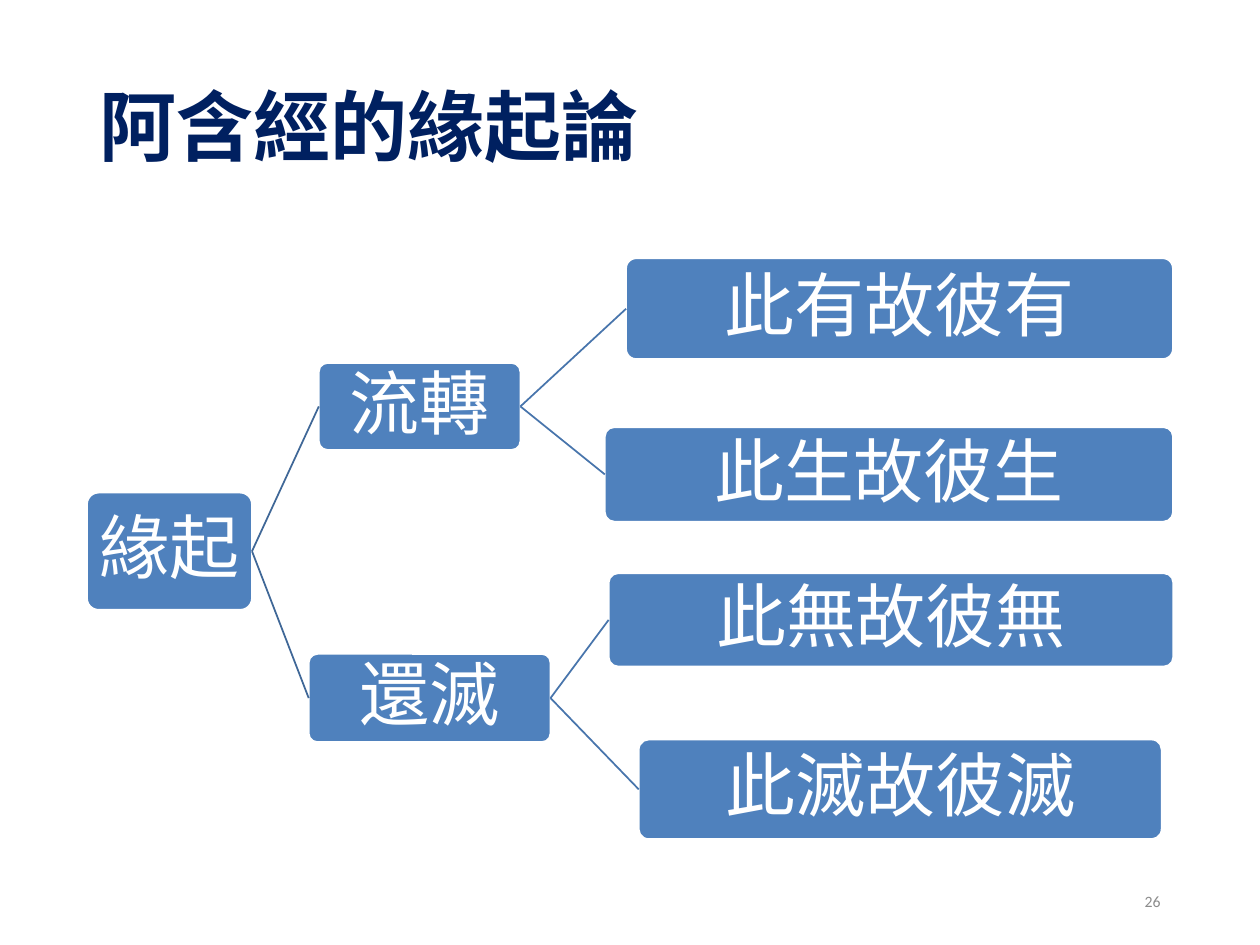
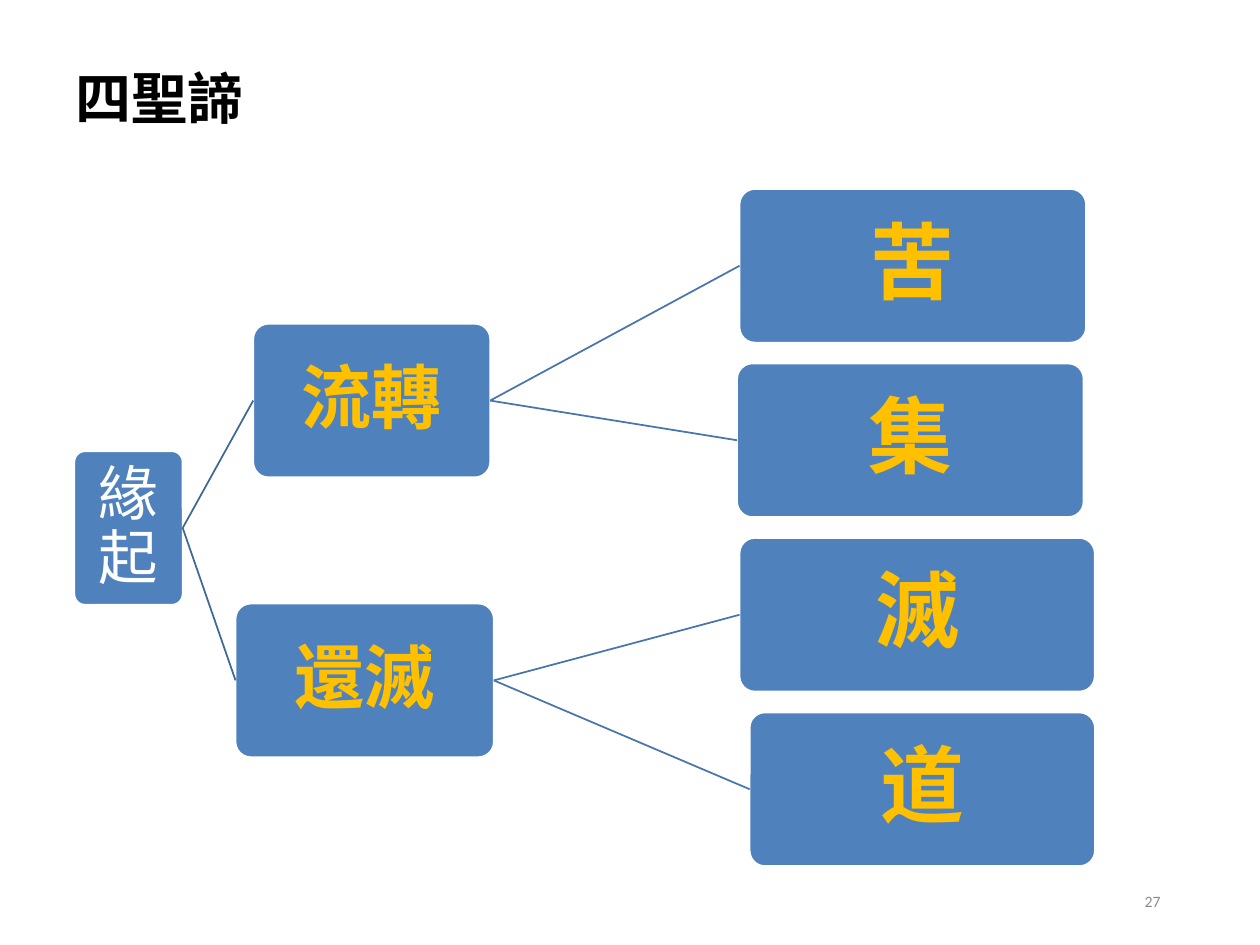
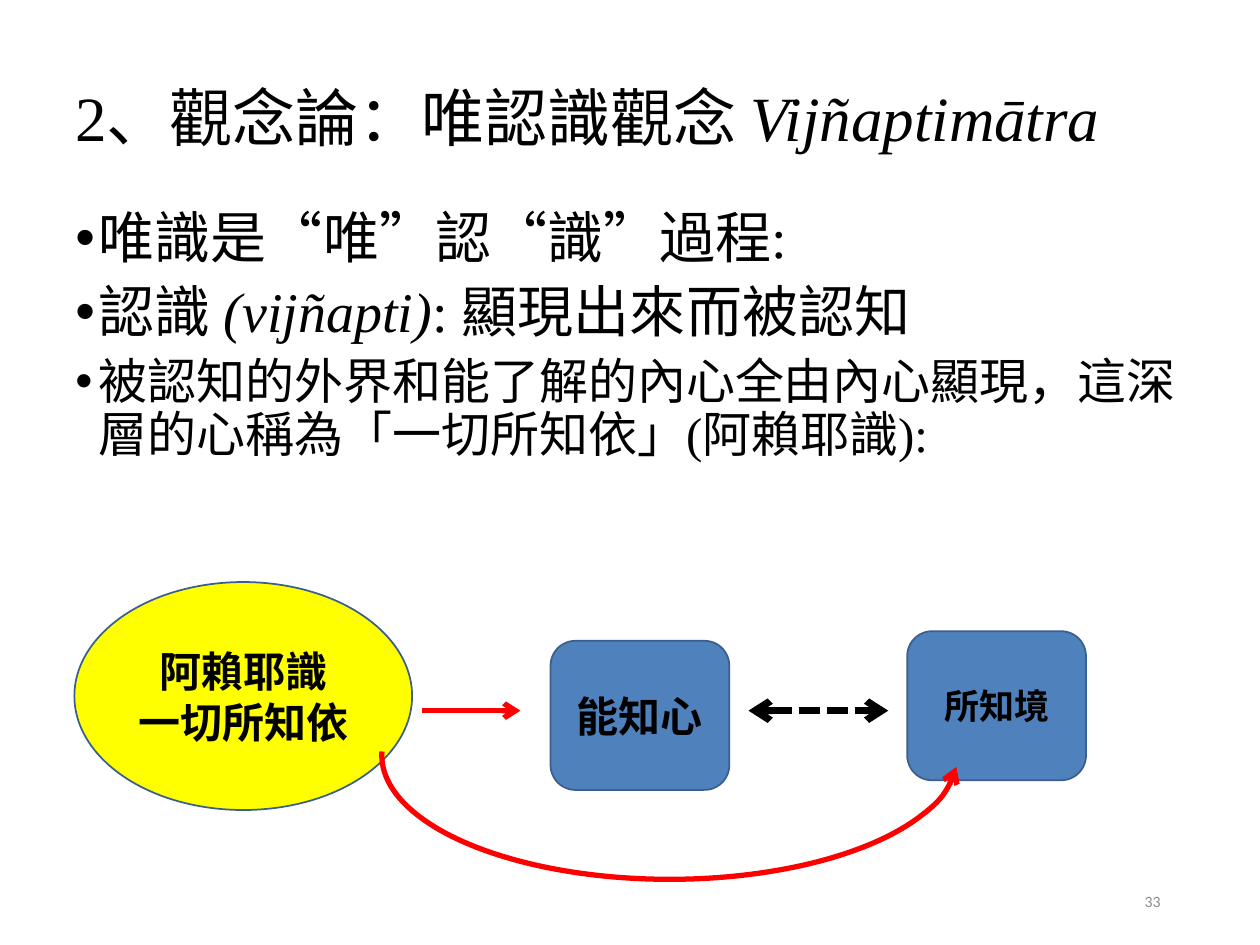
from lxml import etree
from pptx import Presentation
from pptx.dml.color import RGBColor
from pptx.enum import dml, shapes, text
from pptx.oxml import ns
from pptx.util import Pt

BLUE = RGBColor(0x4F, 0x81, 0xBD)
BLUE_EDGE = RGBColor(0x3A, 0x5F, 0x8C)
ROOT_LINK = RGBColor(0x3F, 0x67, 0x97)
BRANCH_LINK = RGBColor(0x48, 0x75, 0xAC)
NAVY = RGBColor(0x00, 0x20, 0x60)
GOLD = RGBColor(0xFF, 0xC0, 0x00)
YELLOW = RGBColor(0xFF, 0xFF, 0x00)
RED = RGBColor(0xFF, 0x00, 0x00)
GREY = RGBColor(0x8C, 0x8C, 0x8C)
BLACK = RGBColor(0, 0, 0)
WHITE = RGBColor(0xFF, 0xFF, 0xFF)
SANS, SERIF = "Calibri", "Times New Roman"
MIDDLE = text.MSO_ANCHOR.MIDDLE
LEFT, CENTER, RIGHT = text.PP_ALIGN.LEFT, text.PP_ALIGN.CENTER, text.PP_ALIGN.RIGHT
ROUNDED = shapes.MSO_SHAPE.ROUNDED_RECTANGLE

PLAIN = [dict(size=40, color=WHITE)] * 3
GILDED = [dict(size=34, color=WHITE), dict(size=40, color=GOLD, bold=True),
          dict(size=48, color=GOLD, bold=True)]

ARISING = ("緣起", (49.7, 281.5, 94.3, 67), [
    ("流轉", (182.2, 207.4, 115.2, 49.7), [
        ("此有故彼有", (357.8, 147.6, 312.5, 57.6), []),
        ("此生故彼生", (345.6, 244.1, 324.7, 54), [])]),
    ("還滅", (176.4, 373.7, 138.2, 50.4), [
        ("此無故彼無", (347.8, 327.6, 322.6, 53.3), []),
        ("此滅故彼滅", (365, 422.6, 298.8, 56.9), [])]),
])

TRUTH_TOP, TRUTH_STEP, TRUTH_HEIGHT = 108, 99.7, 87.8


def truth(row, word, left, width):
    return word, (left, TRUTH_TOP + row * TRUTH_STEP, width, TRUTH_HEIGHT), []


TRUTHS = ("緣起", (42.5, 257.8, 61.9, TRUTH_HEIGHT), [
    ("流轉", (144.7, 185, 135.4, TRUTH_HEIGHT), [
        truth(0, "苦", 422.6, 198), truth(1, "集", 421.2, 198)]),
    ("還滅", (134.6, 344.9, 147.6, TRUTH_HEIGHT), [
        truth(2, "滅", 422.6, 203), truth(3, "道", 428.4, 197.3)]),
])

TREES = [
    ("阿含經的緣起論", (49.7, 28.8, 620.6, 104.4), 44, NAVY, 16.6, ARISING, PLAIN, 26),
    ("四聖諦", (36, 21.6, 648, 72.7), 32, BLACK, 3.6, TRUTHS, GILDED, 27),
]

IDEALISM_TITLE = [("2、觀念論：唯認識觀念 ", False), ("Vijñaptimātra", True)]
IDEALISM_POINTS = [
    (32, [("唯識是“唯”認“識”過程:", False)]),
    (32, [("認識 ", False), ("(vijñapti)", True), (": 顯現出來而被認知", False)]),
    (28, [("被認知的外界和能了解的內心全由內心顯現，"
           "這深層的心稱為「一切所知依」(阿賴耶識):", False)]),
]
MIND_PARTS = [
    (shapes.MSO_SHAPE.OVAL, (42.5, 332.6, 193, 130.3), YELLOW, "阿賴耶識\n一切所知依", 24),
    (ROUNDED, (314.6, 366.2, 102.2, 85.2), BLUE, "能知心", 24),
    (ROUNDED, (518.4, 360.7, 102.2, 85.2), BLUE, "所知境", 20),
]
MIND_AXIS = 406.1


def style(frame, size, color, bold=False, font=SANS, align=LEFT, spacing=None):
    for paragraph in frame.paragraphs:
        paragraph.alignment = align
        if spacing:
            paragraph.line_spacing = spacing
        for run in paragraph.runs:
            run.font.name, run.font.size, run.font.bold = font, Pt(size), bold
            run.font.color.rgb = color


def add_runs(paragraph, pieces):
    for words, italic in pieces:
        run = paragraph.add_run()
        run.text = words
        run.font.italic = italic


def text_area(slide, box, anchor=MIDDLE):
    frame = slide.shapes.add_textbox(*map(Pt, box)).text_frame
    frame.word_wrap = True
    frame.vertical_anchor = anchor
    return frame


def page_number(slide, number):
    frame = text_area(slide, (508.3, 500.4, 162, 28.8))
    frame.text = str(number)
    style(frame, 9, GREY, align=RIGHT)


def block(slide, kind, box, fill, edge, words, **look):
    shape = slide.shapes.add_shape(kind, *map(Pt, box))
    shape.shadow.inherit = False
    shape.fill.solid()
    shape.fill.fore_color.rgb = fill
    shape.line.color.rgb = edge
    shape.line.width = Pt(1)
    frame = shape.text_frame
    frame.word_wrap = True
    frame.vertical_anchor = MIDDLE
    frame.text = words
    style(frame, align=CENTER, **look)
    return shape


def connect(slide, color, width, start=(0, 0), end=(0, 0)):
    link = slide.shapes.add_connector(shapes.MSO_CONNECTOR.STRAIGHT,
                                      *map(Pt, start + end))
    etree.SubElement(link._element.spPr, ns.qn("a:effectLst"))
    link.line.color.rgb = color
    link.line.width = Pt(width)
    return link


def arrowheads(line, *ends):
    for end in ends:
        etree.SubElement(line._get_or_add_ln(), ns.qn(f"a:{end}"), type="arrow")


def draw_tree(slide, node, looks, level=0):
    words, box, children = node
    parent = block(slide, ROUNDED, box, BLUE, WHITE, words, spacing=0.9, **looks[level])
    parent.adjustments[0] = 0.1
    frame = parent.text_frame
    frame.margin_left = frame.margin_right = Pt(2)
    frame.margin_top = frame.margin_bottom = Pt(2)
    for child in children:
        branch = draw_tree(slide, child, looks, level + 1)
        link = connect(slide, BRANCH_LINK if level else ROOT_LINK, 1)
        link.begin_connect(parent, 3)
        link.end_connect(branch, 1)
    return parent


def tree_slide(slide, title, box, size, color, below, tree, looks, number):
    frame = text_area(slide, box)
    frame.margin_bottom = Pt(below)
    frame.text = title
    style(frame, size, color, bold=True, spacing=0.9)
    draw_tree(slide, tree, looks)
    page_number(slide, number)


def idealism_slide(slide):
    title = text_area(slide, (36, 15.1, 648, 102.2))
    add_runs(title.paragraphs[0], IDEALISM_TITLE)
    style(title, 36, BLACK, font=SERIF)

    body = text_area(slide, (36, 116.6, 648, 402.5), text.MSO_ANCHOR.TOP)
    for index, (size, pieces) in enumerate(IDEALISM_POINTS):
        point = body.add_paragraph() if index else body.paragraphs[0]
        add_runs(point, pieces)
        point.space_before = Pt(7.5)
        indent = point._p.get_or_add_pPr()
        indent.set("marL", str(Pt(13.5)))
        indent.set("indent", str(-Pt(13.5)))
        etree.SubElement(indent, ns.qn("a:buFont"), typeface="Arial")
        etree.SubElement(indent, ns.qn("a:buChar"), char="•")
    style(body, 32, BLACK, font=SERIF, spacing=0.9)
    for point, (size, pieces) in zip(body.paragraphs, IDEALISM_POINTS):
        for run in point.runs:
            run.font.size = Pt(size)

    for kind, box, fill, words, size in MIND_PARTS:
        block(slide, kind, box, fill, BLUE_EDGE, words, size=size, color=BLACK, bold=True)

    mutual = connect(slide, BLACK, 4, (427.7, MIND_AXIS), (507.6, MIND_AXIS))
    mutual.line.dash_style = dml.MSO_LINE.SQUARE_DOT
    arrowheads(mutual.line, "headEnd", "tailEnd")
    arising = connect(slide, RED, 3, (241.2, MIND_AXIS), (297.4, MIND_AXIS))
    arrowheads(arising.line, "tailEnd")

    sweep = slide.shapes.add_shape(shapes.MSO_SHAPE.ARC,
                                   *map(Pt, (218.2, 360.7, 329, 141.8)))
    sweep.shadow.inherit = False
    sweep.fill.background()
    sweep.adjustments[0], sweep.adjustments[1] = 107.55, 214.6
    sweep._element.spPr.find(ns.qn("a:xfrm")).set("flipV", "1")
    sweep.line.color.rgb = RED
    sweep.line.width = Pt(3)
    arrowheads(sweep.line, "tailEnd")
    page_number(slide, 33)


def main():
    deck = Presentation()
    deck.slide_width, deck.slide_height = Pt(720), Pt(540)
    blank = deck.slide_layouts[6]
    for tree in TREES:
        tree_slide(deck.slides.add_slide(blank), *tree)
    idealism_slide(deck.slides.add_slide(blank))
    deck.save("out.pptx")


if __name__ == "__main__":
    main()
